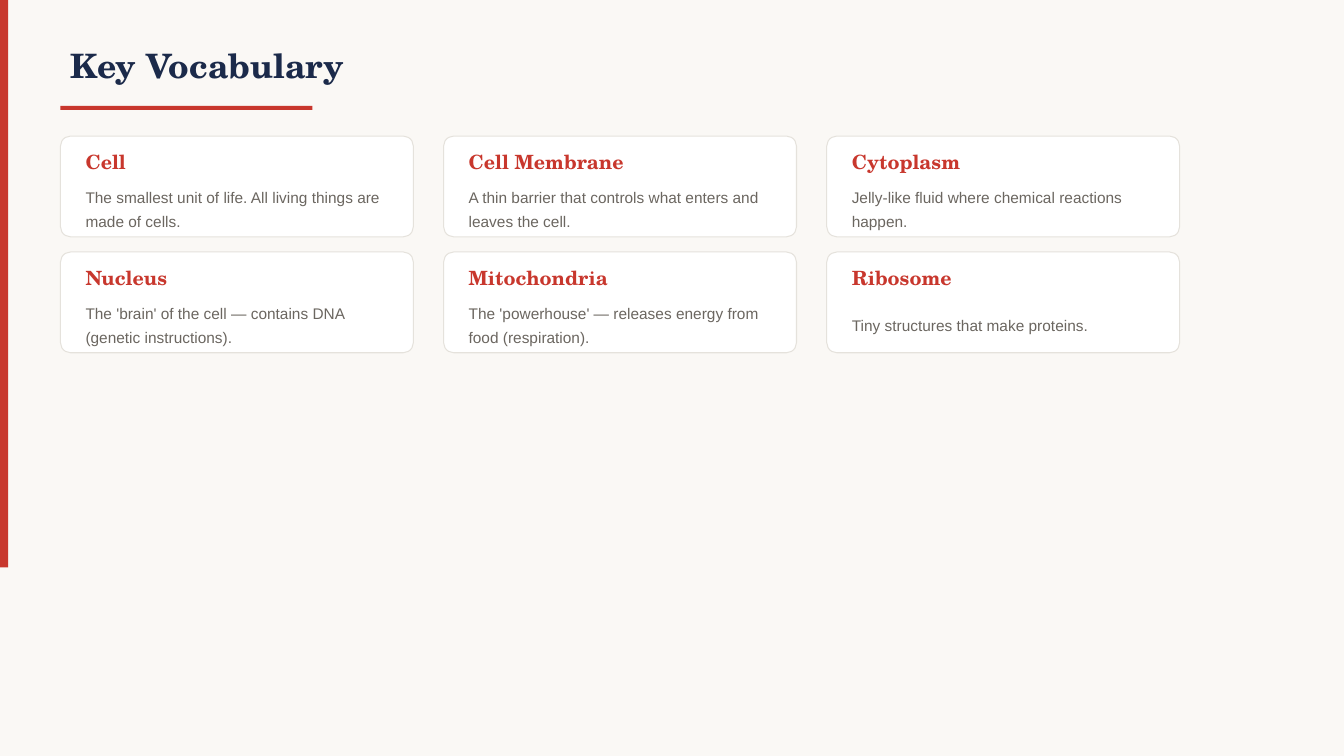
import pptx
import pptx.dml.color
import pptx.enum.shapes
import pptx.enum.text
import pptx.util

RGBColor = pptx.dml.color.RGBColor
SHAPES = pptx.enum.shapes.MSO_SHAPE

PX = 9144  # EMU in one px, at 100 px to the inch
CREAM = RGBColor(0xFA, 0xF8, 0xF5)
RED = RGBColor(0xC8, 0x37, 0x2D)
NAVY = RGBColor(0x1B, 0x2A, 0x4A)
WHITE = RGBColor(0xFF, 0xFF, 0xFF)
BORDER = RGBColor(0xE5, 0xE2, 0xDC)
GREY = RGBColor(0x6B, 0x66, 0x60)
SERIF, SANS = "TeX Gyre Schola", "Arial"

COLUMNS = 3
CARD_WIDTH, CARD_HEIGHT = 350, 100
GAP_X, GAP_Y = 30, 15

VOCABULARY = [
    ("Cell", "The smallest unit of life. All living things are made of cells."),
    ("Cell Membrane", "A thin barrier that controls what enters and leaves the cell."),
    ("Cytoplasm", "Jelly-like fluid where chemical reactions happen."),
    ("Nucleus", "The 'brain' of the cell — contains DNA (genetic instructions)."),
    ("Mitochondria", "The 'powerhouse' — releases energy from food (respiration)."),
    ("Ribosome", "Tiny structures that make proteins."),
]


def emu(*lengths):
    return [pptx.util.Emu(length * PX) for length in lengths]


def write(shape, text, *, size, font, color, bold=False, spacing=1.0):
    frame = shape.text_frame
    frame.word_wrap = True
    frame.auto_size = pptx.enum.text.MSO_AUTO_SIZE.NONE
    frame.vertical_anchor = pptx.enum.text.MSO_ANCHOR.MIDDLE
    para = frame.paragraphs[0]
    para.alignment = pptx.enum.text.PP_ALIGN.LEFT
    para.line_spacing = spacing
    span = para.add_run()
    span.text = text
    span.font.size = pptx.util.Pt(size)
    span.font.name = font
    span.font.bold = bold
    span.font.color.rgb = color


def add_panel(page, kind, box, fill, border=None):
    shape = page.shapes.add_shape(kind, *emu(*box))
    shape.shadow.inherit = False
    shape.fill.solid()
    shape.fill.fore_color.rgb = fill
    if border is None:
        shape.line.fill.background()
    else:
        shape.line.color.rgb = border
        shape.line.width = pptx.util.Pt(0.75)
    return shape


def add_header(page, left, top, width, height):
    title = page.shapes.title
    title.left, title.top, title.width, title.height = emu(left, top, width, height)
    write(title, "Key Vocabulary", size=24, font=SERIF, color=NAVY, bold=True)
    add_panel(page, SHAPES.RECTANGLE, (left, top + height + 5, 250, 4), RED)


def add_card(page, left, top, width, height, term, meaning):
    card = add_panel(page, SHAPES.ROUNDED_RECTANGLE, (left, top, width, height), WHITE, BORDER)
    card.adjustments[0] = 0.1
    inner_left, inner_width = left + 15, width - 30
    heading = page.shapes.add_textbox(*emu(inner_left, top + 8, inner_width, 35))
    write(heading, term, size=14, font=SERIF, color=RED, bold=True)
    body = page.shapes.add_textbox(*emu(inner_left, top + 45, inner_width, height - 50))
    write(body, meaning, size=11, font=SANS, color=GREY, spacing=1.3)


def add_card_grid(page, left, top):
    for index, (term, meaning) in enumerate(VOCABULARY):
        row, column = divmod(index, COLUMNS)
        add_card(page, left + column * (CARD_WIDTH + GAP_X), top + row * (CARD_HEIGHT + GAP_Y),
                 CARD_WIDTH, CARD_HEIGHT, term, meaning)


def main():
    deck = pptx.Presentation()
    deck.slide_width, deck.slide_height = emu(1333, 750)
    page = deck.slides.add_slide(deck.slide_layouts.get_by_name("Title Only"))
    page.background.fill.solid()
    page.background.fill.fore_color.rgb = CREAM

    # Red bar on the left edge
    add_panel(page, SHAPES.RECTANGLE, (0, 0, 8, 563), RED)
    # Title with its underline
    add_header(page, 60, 30, 1000, 70)
    # Vocabulary cards
    add_card_grid(page, 60, 135)

    deck.save("out.pptx")


if __name__ == "__main__":
    main()
